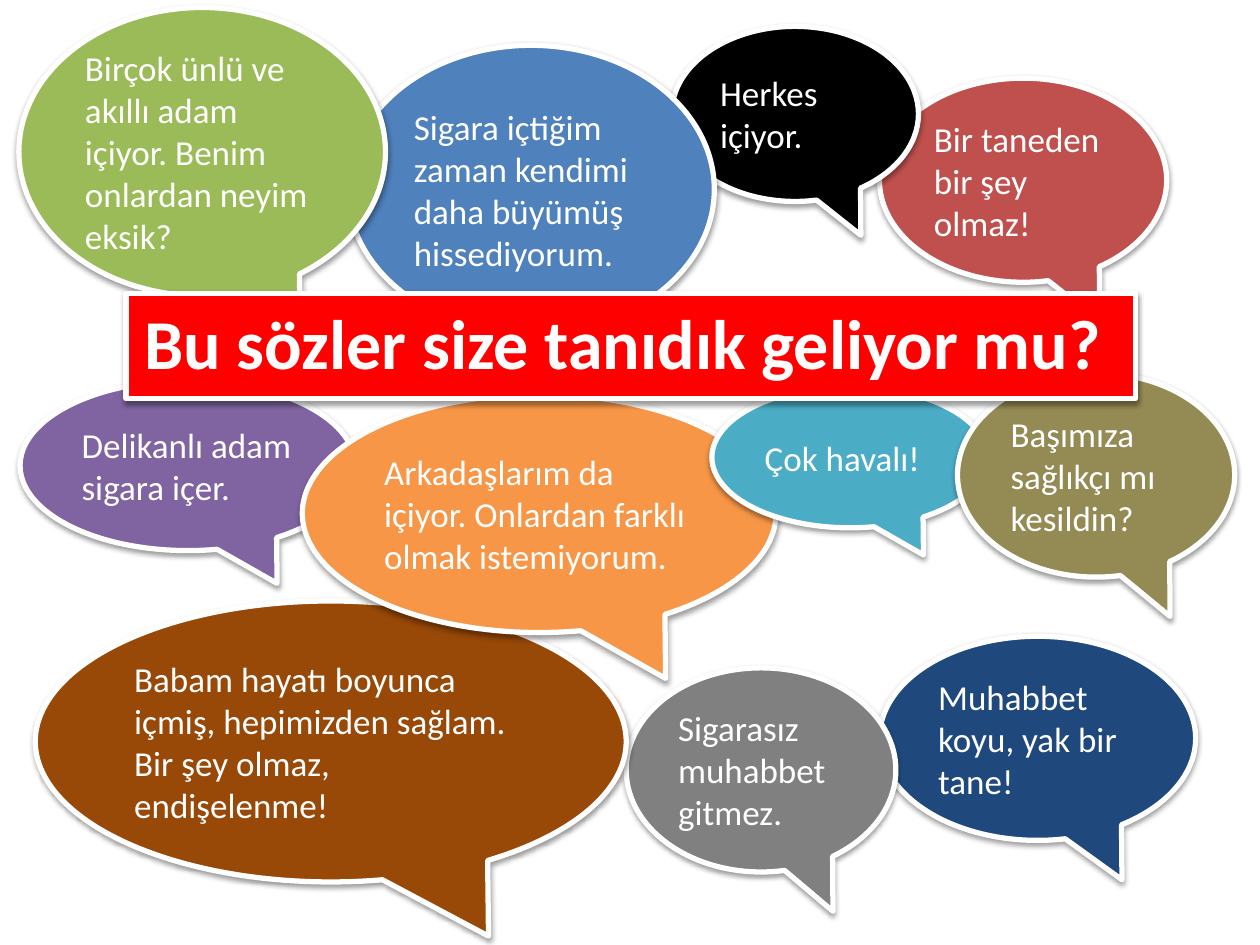
from lxml.etree import SubElement
from pptx import Presentation
from pptx.dml.color import RGBColor
from pptx.enum.shapes import MSO_SHAPE as Shape
from pptx.enum.text import MSO_ANCHOR as Anchor, MSO_AUTO_SIZE as AutoSize, PP_ALIGN as Align
from pptx.oxml.ns import qn
from pptx.util import Inches, Pt

WIDTH, HEIGHT = Inches(10), Inches(7.5)
FONT = "Calibri"
TAIL = (0.267, 0.693)
COLORS = {
    "white": "FFFFFF", "black": "000000", "banner": "FF0000",
    "red": "C0504D", "navy": "1F497D", "gray": "808080",
    "brown": "984807", "purple": "8064A2", "orange": "F79646",
    "blue": "4F81BD", "green": "9BBB59", "teal": "4BACC6", "olive": "948A54",
}

# Left, top, width and height are percentages of the slide's size.
BUBBLES = [
    ("red", (69.8, 8.27, 22.8, 21.6), "Bir taneden bir şey olmaz!"),
    ("black", (53.3, 2.8, 19.6, 18.53), "Herkes içiyor."),
    ("navy", (69.8, 67.33, 25.1, 21.6), "Muhabbet koyu, yak bir tane!"),
    ("gray", (49.7, 70.67, 21.4, 21.6), "Sigarasız muhabbet gitmez."),
    ("brown", (2.8, 63.6, 46.9, 29.73),
     "Babam hayatı boyunca içmiş, hepimizden sağlam. Bir şey olmaz, endişelenme!"),
    ("purple", (1.6, 40.27, 26.6, 18), "Delikanlı adam sigara içer."),
    ("orange", (24, 41.73, 37.6, 25.2),
     "Arkadaşlarım da içiyor. Onlardan farklı olmak istemiyorum."),
    ("blue", (27.6, 4.8, 29.1, 30.53),
     "Sigara içtiğim zaman kendimi daha büyümüş hissediyorum."),
    ("green", (1.5, 0.8, 29.1, 30.53),
     "Birçok ünlü ve akıllı adam içiyor. Benim onlardan neyim eksik?"),
    ("teal", (56.5, 40.93, 21.9, 14.93), "Çok havalı!"),
    ("olive", (76, 39.47, 22, 21.6), "Başımıza sağlıkçı mı kesildin?"),
]
BANNER_AREA = (10, 31.07, 80.1, 10.27)


def color(name):
    return RGBColor.from_string(COLORS[name])


def to_lengths(area):
    return [round(share / 100 * side) for share, side in zip(area, (WIDTH, HEIGHT) * 2)]


def add_shadow(box):
    box.shadow.inherit = False
    effects = box.element.spPr.find(qn("a:effectLst"))
    shadow = SubElement(effects, qn("a:outerShdw"), blurRad=str(Pt(3.1)),
                        dist=str(Pt(1.6)), dir="5400000", rotWithShape="0")
    tint = SubElement(shadow, qn("a:srgbClr"), val=COLORS["black"])
    SubElement(tint, qn("a:alpha"), val="38000")


def paint(box, fill):
    box.fill.solid()
    box.fill.fore_color.rgb = color(fill)
    box.line.color.rgb = color("white")
    box.line.width = Pt(3)
    add_shadow(box)


def write(box, text, size, align, bold=False):
    para = box.text_frame.paragraphs[0]
    para.alignment = align
    span = para.add_run()
    span.text = text
    span.font.name = FONT
    span.font.size = Pt(size)
    span.font.bold = bold
    span.font.color.rgb = color("white")


def add_bubble(page, fill, area, text):
    bubble = page.shapes.add_shape(Shape.OVAL_CALLOUT, *to_lengths(area))
    for index, value in enumerate(TAIL):
        bubble.adjustments[index] = value
    paint(bubble, fill)
    bubble.text_frame.word_wrap = True
    bubble.text_frame.vertical_anchor = Anchor.MIDDLE
    write(bubble, text, 20, Align.LEFT)


def add_banner(page, text):
    banner = page.shapes.title
    banner.left, banner.top, banner.width, banner.height = to_lengths(BANNER_AREA)
    paint(banner, "banner")
    frame = banner.text_frame
    frame.word_wrap = False
    frame.auto_size = AutoSize.SHAPE_TO_FIT_TEXT
    frame.vertical_anchor = Anchor.TOP
    write(banner, text, 40, Align.CENTER, bold=True)
    banner.element.getparent().append(banner.element)


def main():
    deck = Presentation()
    deck.slide_width, deck.slide_height = WIDTH, HEIGHT
    page = deck.slides.add_slide(deck.slide_layouts.get_by_name("Title Only"))
    for fill, area, text in BUBBLES:
        add_bubble(page, fill, area, text)
    add_banner(page, "Bu sözler size tanıdık geliyor mu? ")
    deck.save("out.pptx")


if __name__ == "__main__":
    main()
